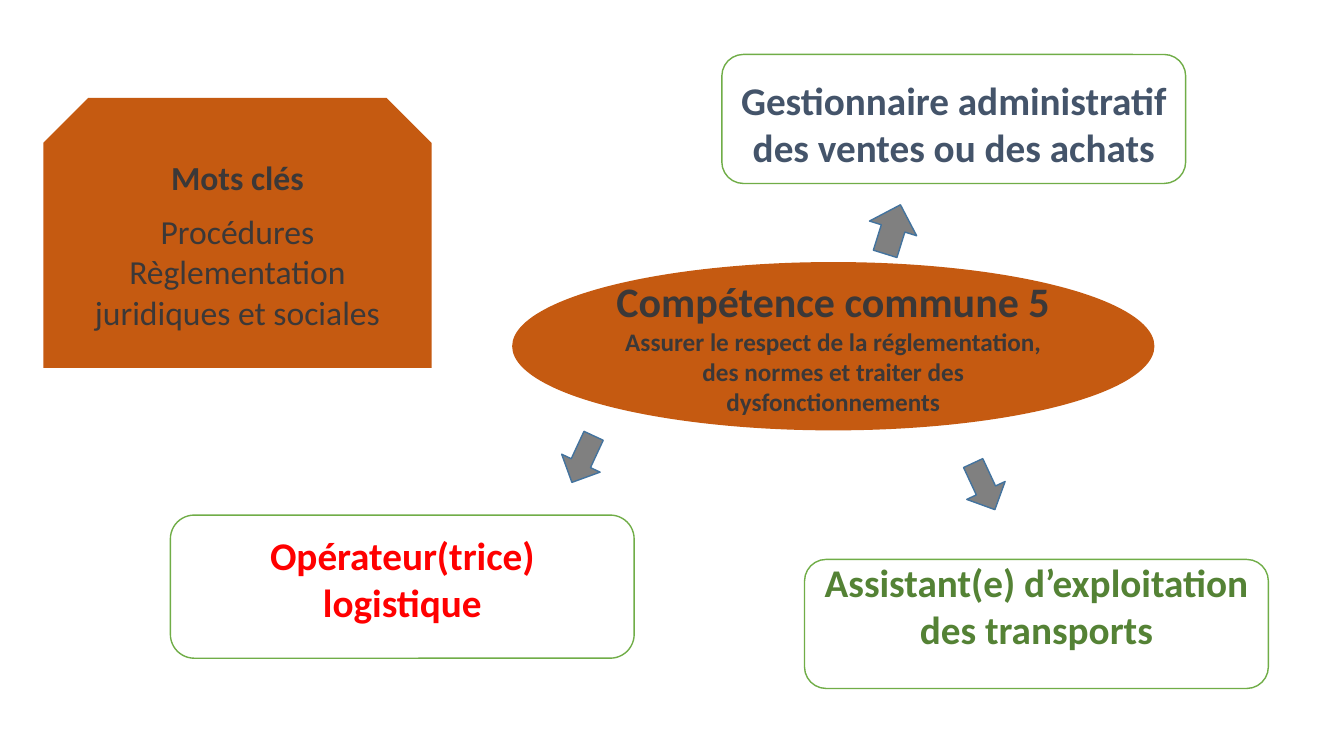
from pptx import Presentation
from pptx.dml.color import RGBColor
from pptx.enum.shapes import MSO_SHAPE as Shape
from pptx.enum.text import MSO_ANCHOR as Anchor, PP_ALIGN as Align
from pptx.util import Inches, Pt

RUST, DARK, GREY = "C55A11", "3B3838", "808080"
WHITE, GREEN, BLUE = "FFFFFF", "70AD47", "43739E"


def draw(kind, box, fill, line=None):
    """Add a preset shape; box is left, top, width, height in inches."""
    shape = slide.shapes.add_shape(kind, *map(Inches, box))
    shape.shadow.inherit = False
    shape.fill.solid()
    shape.fill.fore_color.rgb = RGBColor.from_string(fill)
    if line:
        shape.line.color.rgb = RGBColor.from_string(line)
        shape.line.width = Pt(1)
    else:
        shape.line.fill.background()
    return shape


def write(shape, rows, color):
    """Fill a shape with centred paragraphs; a row is text, size, bold."""
    frame = shape.text_frame
    frame.word_wrap = True
    frame.vertical_anchor = Anchor.MIDDLE
    frame.text = "\n".join(row[0] for row in rows)
    for para, (_, size, bold) in zip(frame.paragraphs, rows):
        para.alignment = Align.CENTER
        font = para.runs[0].font
        font.name, font.size, font.bold = "Calibri", Pt(size), bold
        font.color.rgb = RGBColor.from_string(color)
    return frame


deck = Presentation()
deck.slide_width, deck.slide_height = Inches(13.33), Inches(7.5)
slide = deck.slides.add_slide(deck.slide_layouts[6])

# Shared skill in the centre
skill = draw(Shape.OVAL, (5.08, 2.6, 6.37, 1.67), RUST)
write(skill, [
    ("Compétence commune 5", 30, True),
    ("Assurer le respect de la réglementation, des normes et traiter "
     "des dysfonctionnements", 18, True),
], DARK)

# Three jobs: text, colour, left, top, height, top and bottom margins
jobs = [
    ("Opérateur(trice) logistique", "FF0000", 1.69, 5.11, 1.42, 0.05, 0.22),
    ("Assistant(e) d’exploitation des transports", "548235",
     7.98, 5.55, 1.28, 0.05, 0.42),
    ("Gestionnaire administratif des ventes ou des achats", "44546A",
     7.16, 0.54, 1.28, 0.13, 0.05),
]
for text, color, left, top, high, above, below in jobs:
    job = draw(Shape.ROUNDED_RECTANGLE, (left, top, 4.6, high), WHITE, GREEN)
    frame = write(job, [(text, 28, True)], color)
    frame.margin_top, frame.margin_bottom = Inches(above), Inches(below)

# Arrows from the skill to the jobs: left, top, width, turn
for left, top, wide, turn in [
    (5.57, 4.3, 0.42, 25),
    (9.55, 4.57, 0.42, 335),
    (8.61, 2.02, 0.49, 197.3),
]:
    arrow = draw(Shape.DOWN_ARROW, (left, top, wide, 0.51), GREY, BLUE)
    arrow.rotation = turn

# Keywords
words = draw(Shape.SNIP_2_SAME_RECTANGLE, (0.43, 0.97, 3.85, 2.68), RUST)
frame = write(words, [
    ("Mots clés", 24, True),
    ("Procédures", 24, False),
    ("Règlementation juridiques et sociales", 24, False),
], DARK)
frame.paragraphs[0].space_after = Pt(10)

deck.save("out.pptx")
